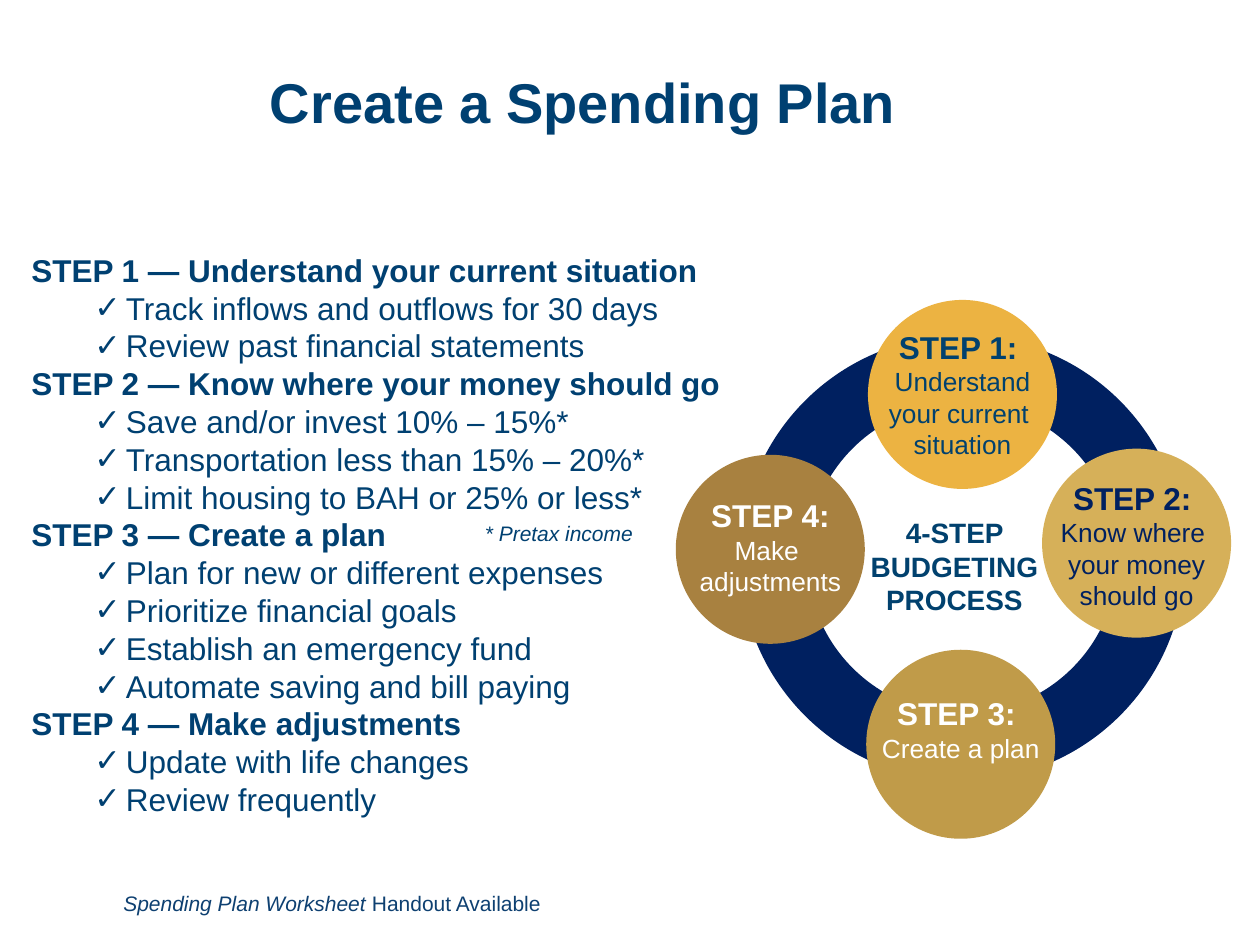
from lxml.etree import SubElement
from pptx import Presentation
from pptx.dml.color import RGBColor
from pptx.enum.shapes import MSO_SHAPE
from pptx.enum.text import MSO_ANCHOR, MSO_AUTO_SIZE, PP_ALIGN
from pptx.oxml.ns import qn
from pptx.util import Pt

# Content
TITLE = "Create a Spending Plan"
PLAN = [
    ("STEP 1 — Understand your current situation",
     ["Track inflows and outflows for 30 days",
      "Review past financial statements"]),
    ("STEP 2 — Know where your money should go",
     ["Save and/or invest 10% – 15%*",
      "Transportation less than 15% – 20%*",
      "Limit housing to BAH or 25% or less*"]),
    ("STEP 3 — Create a plan",
     ["Plan for new or different expenses",
      "Prioritize financial goals",
      "Establish an emergency fund",
      "Automate saving and bill paying"]),
    ("STEP 4 — Make adjustments",
     ["Update with life changes",
      "Review frequently"]),
]
FOOTNOTE = "* Pretax income"
HANDOUT = ["Spending Plan Worksheet", " Handout Available"]
HUB = ["4-STEP BUDGETING", "PROCESS"]

NAVY, BLUE, WHITE = "002060", "004071", "FFFFFF"
HUB_BLUE, HANDOUT_BLUE = "01416E", "0E4071"

# Circle centre, label top, fill, text colour, label lines
STEPS = [
    ((550, 225.4), 183.6, "ECB342", HUB_BLUE,
     ["STEP 1: ", "Understand your current ", "situation"]),
    ((649.5, 310.4), 270, "D6B059", NAVY,
     ["STEP 2: ", "Know where ", "your money", "should go"]),
    ((549, 425.3), 393.1, "C09B49", WHITE,
     ["STEP 3: ", "Create a plan"]),
    ((440.2, 313.9), 280.1, "A88140", WHITE,
     ["STEP 4:", "Make ", "adjustments"]),
]
RING_CENTRE, RING_SIZE, RING_WIDTH = (550, 319), 216, 38.5
CIRCLE_SIZE, LABEL_WIDTH = 108, 104.4


def rgb(value):
    return RGBColor.from_string(value)


def style(paragraph, size, colour, bold=False, italic=False):
    for run in paragraph.runs:
        font = run.font
        font.name, font.size = "Arial", Pt(size)
        font.bold, font.italic = bold, italic
        font.color.rgb = rgb(colour)


def place(shape, left, top, width, height):
    shape.left, shape.top = Pt(left), Pt(top)
    shape.width, shape.height = Pt(width), Pt(height)


def add_text(shapes, box, lines):
    label = shapes.add_textbox(*map(Pt, box))
    label.text_frame.word_wrap = True
    label.text_frame.text = "\n".join(lines)
    return label.text_frame.paragraphs


def add_circle(shapes, centre, size):
    x, y = centre
    circle = shapes.add_shape(MSO_SHAPE.OVAL, Pt(x - size / 2),
                              Pt(y - size / 2), Pt(size), Pt(size))
    circle.shadow.inherit = False
    return circle


def set_bullet(paragraph, indent, hanging, mark=None):
    properties = paragraph._p.get_or_add_pPr()
    properties.set("marL", str(Pt(indent)))
    properties.set("indent", str(Pt(-hanging)))
    if mark:
        SubElement(properties, qn("a:buFont"), typeface="Arial")
        SubElement(properties, qn("a:buChar"), char=mark)
    else:
        SubElement(properties, qn("a:buNone"))


presentation = Presentation()
presentation.slide_width, presentation.slide_height = Pt(720), Pt(540)
slide = presentation.slides.add_slide(presentation.slide_layouts[1])
title, plan = slide.placeholders

# Title
place(title, 147, 8, 522.5, 104.4)
title.text_frame.text = TITLE
title.text_frame.vertical_anchor = MSO_ANCHOR.MIDDLE
heading = title.text_frame.paragraphs[0]
heading.alignment = PP_ALIGN.LEFT
heading.line_spacing = 0.9
style(heading, 32, BLUE, bold=True)

# Step list
place(plan, 10, 139.7, 558.7, 371.5)
plan.text_frame.auto_size = MSO_AUTO_SIZE.NONE
rows = [row for step, actions in PLAN
        for row in [(step, True)] + [(action, False) for action in actions]]
plan.text_frame.text = "\n".join(text for text, _ in rows)
for paragraph, (_, is_step) in zip(plan.text_frame.paragraphs, rows):
    if is_step:
        set_bullet(paragraph, 0.7, 0)
    else:
        paragraph.level = 1
        set_bullet(paragraph, 54.7, 18, "✓")
    paragraph.space_before = Pt(0)
    paragraph.line_spacing = Pt(21.6)
    style(paragraph, 18, BLUE, bold=is_step)

# Footnote to the list
footnote = add_text(slide.shapes, (270, 294, 103, 25), [FOOTNOTE])[0]
style(footnote, 12, BLUE, italic=True)

# Ring with the four step circles
cycle = slide.shapes.add_group_shape().shapes
ring = add_circle(cycle, RING_CENTRE, RING_SIZE)
ring.fill.background()
ring.line.color.rgb = rgb(NAVY)
ring.line.width = Pt(RING_WIDTH)
for centre, _, fill, _, _ in STEPS:
    circle = add_circle(cycle, centre, CIRCLE_SIZE)
    circle.fill.solid()
    circle.fill.fore_color.rgb = rgb(fill)
    circle.line.fill.background()

# Ring and circle labels
for paragraph in add_text(cycle, (479.5, 291, 131.8, 65.5), HUB):
    paragraph.alignment = PP_ALIGN.CENTER
    style(paragraph, 16, HUB_BLUE, bold=True)
for (x, _), top, _, colour, lines in STEPS:
    box = (x - LABEL_WIDTH / 2, top, LABEL_WIDTH, 84)
    for index, paragraph in enumerate(add_text(cycle, box, lines)):
        paragraph.alignment = PP_ALIGN.CENTER
        style(paragraph, 15 if index else 18, colour, bold=index == 0)

# Handout line
handout = add_text(slide.shapes, (63.4, 505.4, 384.5, 21.8), HANDOUT[:1])[0]
handout.add_run().text = HANDOUT[1]
style(handout, 12, HANDOUT_BLUE)
handout.runs[0].font.italic = True

presentation.save("out.pptx")
